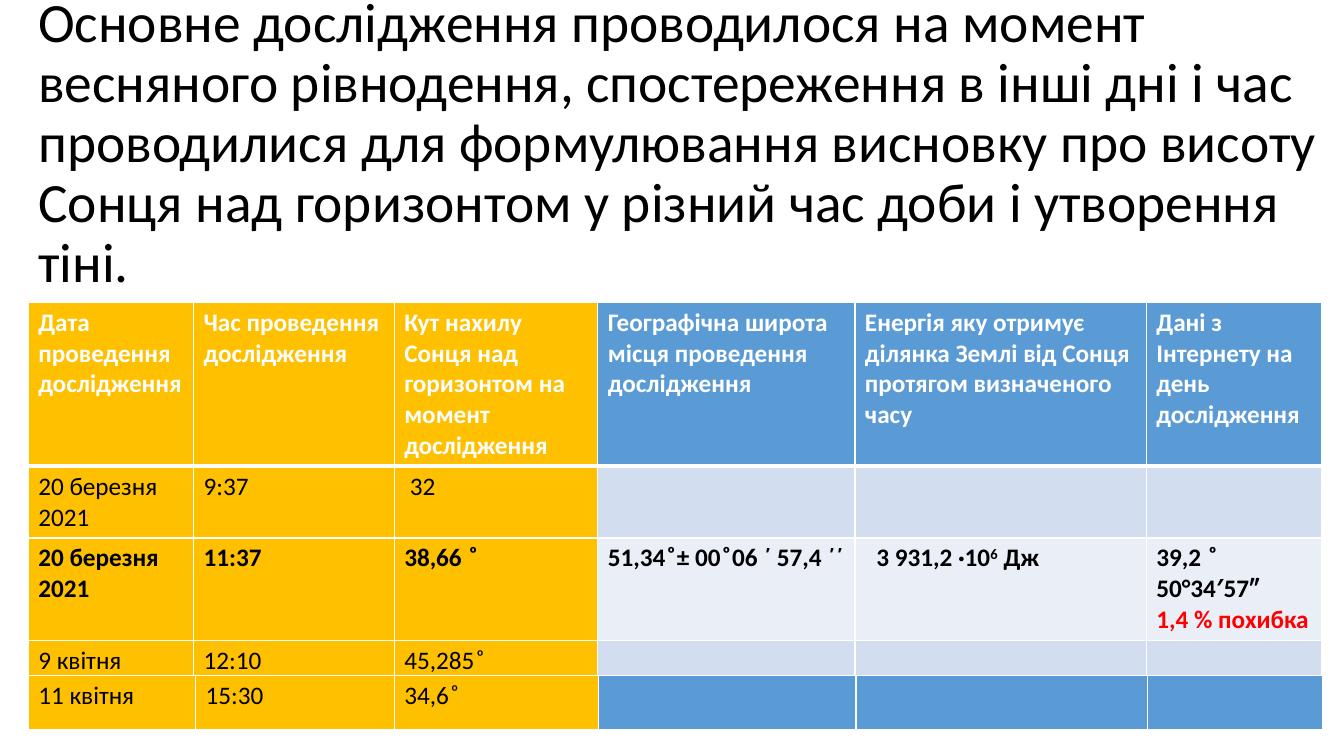
from lxml import etree
from pptx import Presentation
from pptx.dml.color import RGBColor
from pptx.enum import text
from pptx.oxml.ns import qn
from pptx.util import Inches, Pt

COLORS = {
    "black": "000000", "white": "FFFFFF", "red": "FF0000",
    "gold": "FFC000", "blue": "5B9BD5",
    "band_dark": "D2DEEF", "band_light": "EAEFF7",
}
FONT = "Calibri"
GOLD_COLUMNS = 3

TITLE = ("Основне дослідження проводилося на момент весняного рівнодення, "
         "спостереження в інші дні і час проводилися для формулювання висновку "
         "про висоту Сонця над горизонтом у різний час доби і утворення тіні.")
HEADER = ["Дата проведення дослідження", "Час проведення дослідження",
          "Кут нахилу Сонця над горизонтом на момент дослідження",
          "Географічна широта місця проведення дослідження",
          "Енергія яку отримує ділянка Землі від Сонця протягом визначеного часу",
          "Дані з Інтернету на день дослідження"]
# Carets enclose a superscript
EQUINOX = ["20 березня 2021", "11:37", "38,66  ͦ", "51,34 ͦ ± 00 ͦ 06 ΄ 57,4 ΄΄",
           "  3 931,2 ·10^6^ Дж", "39,2  ͦ\n50°34′57″\n1,4 % похибка"]

# Each row: height, cell texts, fill of the right half, text colour, bold
MAIN_ROWS = [
    (1.62, HEADER, "blue", "white", True),
    (0.71, ["20 березня 2021", "9:37", " 32"], "band_dark", "black", False),
    (1.01, EQUINOX, "band_light", "black", True),
    (0.37, ["9 квітня", "12:10", "45,285 ͦ"], "band_dark", "black", False),
]
LAST_ROWS = [(0.55, ["11 квітня", "15:30", "34,6 ͦ"], "blue", "black", False)]


def rgb(name):
    return RGBColor.from_string(COLORS[name])


def style_font(p, size, color, bold=False):
    p.font.name = FONT
    p.font.size = Pt(size)
    p.font.bold = bold
    p.font.color.rgb = rgb(color)


def add_title(s):
    title = s.shapes.title
    title.left, title.top = Inches(0.28), Inches(0)
    title.width, title.height = Inches(12.91), Inches(2.87)
    tf = title.text_frame
    tf.text = TITLE
    tf.word_wrap = True
    tf.auto_size = text.MSO_AUTO_SIZE.NONE
    tf.vertical_anchor = text.MSO_ANCHOR.MIDDLE
    p = tf.paragraphs[0]
    p.alignment = text.PP_ALIGN.LEFT
    p.line_spacing = 0.9
    style_font(p, 39.6, "black")


def set_borders(cell, top, bottom):
    tc_pr = cell._tc.get_or_add_tcPr()
    for side, width in (("L", 1), ("R", 1), ("T", top), ("B", bottom)):
        line = etree.SubElement(tc_pr, qn(f"a:ln{side}"), w=str(Pt(width)))
        fill = etree.SubElement(line, qn("a:solidFill"))
        etree.SubElement(fill, qn("a:srgbClr"), val=COLORS["white"])


def fill_text(cell, content, color, bold):
    tf = cell.text_frame
    for i, line in enumerate(content.split("\n")):
        p = tf.add_paragraph() if i else tf.paragraphs[0]
        style_font(p, 18, color, bold)
        for j, part in enumerate(line.split("^")):
            if part:
                r = p.add_run()
                r.text = part
                if j % 2:
                    r.font._element.set("baseline", "30000")


def add_table(s, top, widths, rows, thick_line):
    """thick_line is the index of the row whose bottom border is thick."""
    height = sum(row[0] for row in rows)
    table = s.shapes.add_table(len(rows), len(widths), Inches(0.28), Inches(top),
                               Inches(sum(widths)), Inches(height)).table
    table.first_row = table.horz_banding = False
    for column, width in zip(table.columns, widths):
        column.width = Inches(width)
    for i, (row_height, texts, fill, color, bold) in enumerate(rows):
        table.rows[i].height = Inches(row_height)
        for j, cell in enumerate(table.rows[i].cells):
            set_borders(cell, 3 if i == thick_line + 1 else 1,
                        3 if i == thick_line else 1)
            cell.fill.solid()
            cell.fill.fore_color.rgb = rgb("gold" if j < GOLD_COLUMNS else fill)
            fill_text(cell, texts[j] if j < len(texts) else "", color, bold)
    return table


def main():
    prs = Presentation()
    prs.slide_width, prs.slide_height = Inches(13.33), Inches(7.5)
    s = prs.slides.add_slide(prs.slide_layouts[5])
    add_title(s)

    # Observations, with the error of the result in red
    table = add_table(s, 3, [1.64, 1.99, 2.02, 2.55, 2.89, 1.74], MAIN_ROWS, 0)
    table.cell(2, 5).text_frame.paragraphs[-1].font.color.rgb = rgb("red")

    # Last observation, in a table of its own
    add_table(s, 6.7, [1.66, 1.97, 2.03, 2.55, 2.89, 1.74], LAST_ROWS, 0)
    prs.save("out.pptx")


if __name__ == "__main__":
    main()
